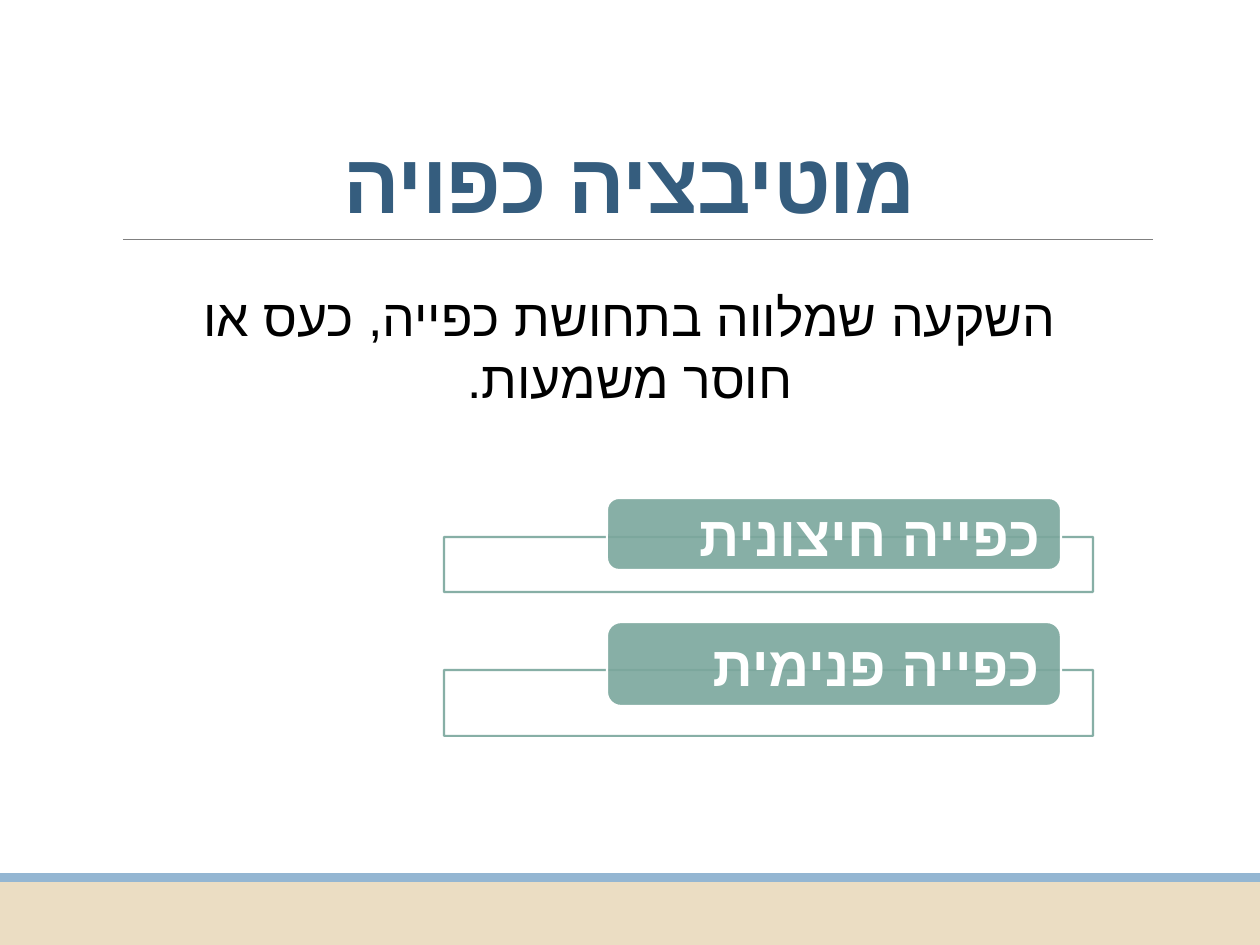
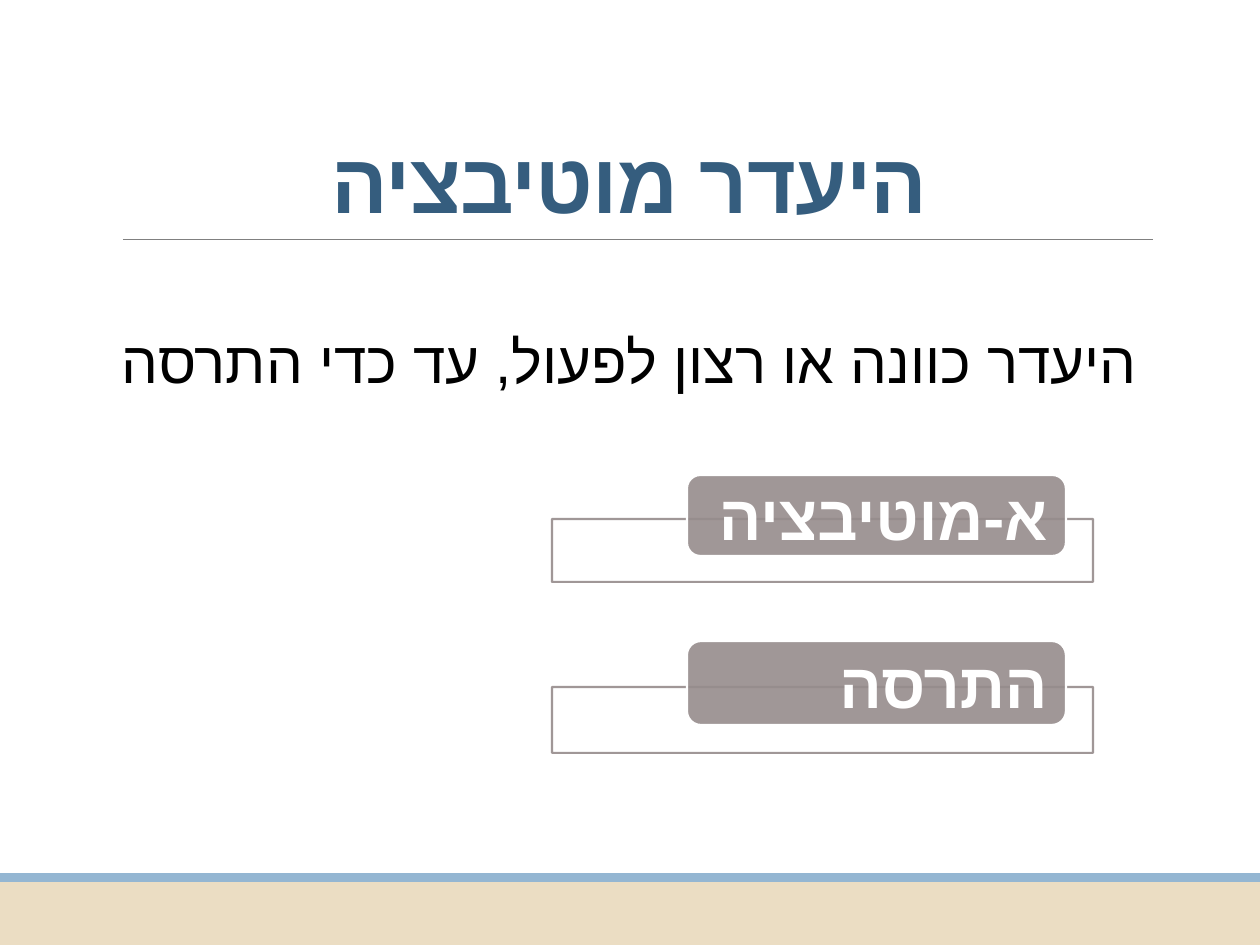
from dataclasses import dataclass

from lxml import etree
from pptx import Presentation
from pptx import util as u
from pptx.dml.color import RGBColor
from pptx.enum import shapes, text
from pptx.oxml.ns import qn

PX = u.Inches(1) / 126  # one px in EMU
SLIDE_W, SLIDE_H = 1260, 945


@dataclass(frozen=True)
class Theme:
    font: str = "Arial"
    white: str = "FFFFFF"
    ink: str = "000000"
    title: str = "355D7E"
    sand: str = "EBDDC3"
    sky: str = "94B6D2"
    rule: str = "808080"
    green: str = "7BA79D"
    taupe: str = "968C8C"
    title_size: float = 48
    rule_width: float = 0.5
    frame_width: float = 1.25
    opacity: int = 90


@dataclass(frozen=True)
class Box:
    left: int
    top: int
    width: int
    height: int

    def emu(self) -> tuple[int, ...]:
        return tuple(round(v * PX) for v in (self.left, self.top, self.width, self.height))


@dataclass(frozen=True)
class Kind:
    """A labelled tab sitting on the top edge of an outlined frame."""
    label: str
    tab_top: int
    tab_height: int
    frame_top: int
    frame_height: int


@dataclass(frozen=True)
class Topic:
    title: str
    statement: str
    statement_box: Box
    statement_size: float
    accent: str
    frame_width: int
    label_size: float
    kinds: tuple[Kind, ...]


THEME = Theme()
TITLE_BOX = Box(48, 67, 1163, 164)
BANDS = ((Box(0, 882, SLIDE_W, 63), THEME.sand), (Box(0, 873, SLIDE_W, 9), THEME.sky))
RULE = Box(123, 239, 1030, 0)
FRAME_RIGHT = 1093
# Shares of the frame width
TAB_SHARE, TAB_MARGIN, LABEL_INSET = 0.7, 0.05, 0.0265

TOPICS = (
    Topic(
        "מוטיבציה כפויה",
        "השקעה שמלווה בתחושת כפייה, כעס או חוסר משמעות.",
        Box(155, 282, 950, 130), 29.6, THEME.green, 649, 32,
        (Kind("כפייה חיצונית", 498, 72, 537, 55),
         Kind("כפייה פנימית", 622, 84, 670, 66)),
    ),
    Topic(
        "היעדר מוטיבציה",
        "היעדר כוונה או רצון לפעול, עד כדי התרסה",
        Box(107, 295, 1046, 130), 33.3, THEME.taupe, 541, 36,
        (Kind("א-מוטיבציה", 475, 81, 519, 63),
         Kind("התרסה", 641, 84, 687, 66)),
    ),
)


def set_opacity(fill_parent) -> None:
    """Make the solid fill directly under the given element translucent."""
    color = fill_parent.find(qn("a:solidFill"))[0]
    etree.SubElement(color, qn("a:alpha")).set("val", str(THEME.opacity * 1000))


def write_hebrew(frame, words: str, size: float, color: str, align, anchor,
                 bold: bool = False):
    """Write one right-to-left paragraph and return its run."""
    frame.word_wrap = True
    frame.auto_size = text.MSO_AUTO_SIZE.NONE
    frame.vertical_anchor = anchor
    paragraph = frame.paragraphs[0]
    paragraph.alignment = align
    paragraph._p.get_or_add_pPr().set("rtl", "1")
    run = paragraph.add_run()
    run.text = words
    run.font.size = u.Pt(size)
    run.font.bold = bold
    run.font.color.rgb = RGBColor.from_string(color)
    run.font.name = THEME.font
    props = run._r.get_or_add_rPr()
    props.set("lang", "he-IL")
    etree.SubElement(props, qn("a:cs")).set("typeface", THEME.font)
    return run


def add_block(slide, preset, box: Box, fill: str, line: str | None = None):
    block = slide.shapes.add_shape(preset, *box.emu())
    block.shadow.inherit = False
    block.fill.solid()
    block.fill.fore_color.rgb = RGBColor.from_string(fill)
    if line is None:
        block.line.fill.background()
    else:
        block.line.color.rgb = RGBColor.from_string(line)
        block.line.width = u.Pt(THEME.frame_width)
    return block


def add_background(slide) -> None:
    # Bottom bands
    for box, color in BANDS:
        add_block(slide, shapes.MSO_SHAPE.RECTANGLE, box, color)
    # Rule under the title
    left, top, width, _ = RULE.emu()
    rule = slide.shapes.add_connector(
        shapes.MSO_CONNECTOR.STRAIGHT, left, top, left + width, top)
    rule.line.color.rgb = RGBColor.from_string(THEME.rule)
    rule.line.width = u.Pt(THEME.rule_width)
    etree.SubElement(rule._element.spPr, qn("a:effectLst"))


def add_title(slide, words: str) -> None:
    title = slide.shapes.title
    title.left, title.top, title.width, title.height = TITLE_BOX.emu()
    frame = title.text_frame
    frame.margin_bottom = 0
    run = write_hebrew(frame, words, THEME.title_size, THEME.title,
                       text.PP_ALIGN.CENTER, text.MSO_ANCHOR.BOTTOM, bold=True)
    frame.paragraphs[0].line_spacing = 0.85
    run._r.get_or_add_rPr().set("spc", "-50")


def add_statement(slide, topic: Topic) -> None:
    statement = slide.shapes.add_textbox(*topic.statement_box.emu())
    write_hebrew(statement.text_frame, topic.statement, topic.statement_size,
                 THEME.ink, text.PP_ALIGN.CENTER, text.MSO_ANCHOR.MIDDLE)


def add_kind(slide, kind: Kind, topic: Topic) -> None:
    width = topic.frame_width
    # Outlined frame
    frame_box = Box(FRAME_RIGHT - width, kind.frame_top, width, kind.frame_height)
    frame = add_block(slide, shapes.MSO_SHAPE.RECTANGLE, frame_box, THEME.white, topic.accent)
    set_opacity(frame._element.spPr)
    set_opacity(frame._element.spPr.find(qn("a:ln")))
    # Labelled tab
    tab_width = round(width * TAB_SHARE)
    tab_left = FRAME_RIGHT - round(width * TAB_MARGIN) - tab_width
    tab = add_block(slide, shapes.MSO_SHAPE.ROUNDED_RECTANGLE,
                    Box(tab_left, kind.tab_top, tab_width, kind.tab_height),
                    topic.accent, THEME.white)
    set_opacity(tab._element.spPr)
    label = tab.text_frame
    label.margin_left = label.margin_right = round(width * LABEL_INSET * PX)
    label.margin_top = label.margin_bottom = 0
    write_hebrew(label, kind.label, topic.label_size, THEME.white,
                 text.PP_ALIGN.RIGHT, text.MSO_ANCHOR.MIDDLE, bold=True)


def main() -> None:
    deck = Presentation()
    deck.slide_width, deck.slide_height = round(SLIDE_W * PX), round(SLIDE_H * PX)
    title_only = deck.slide_layouts[5]
    for topic in TOPICS:
        slide = deck.slides.add_slide(title_only)
        add_background(slide)
        add_title(slide, topic.title)
        add_statement(slide, topic)
        for kind in topic.kinds:
            add_kind(slide, kind, topic)
    deck.save("out.pptx")


if __name__ == "__main__":
    main()
